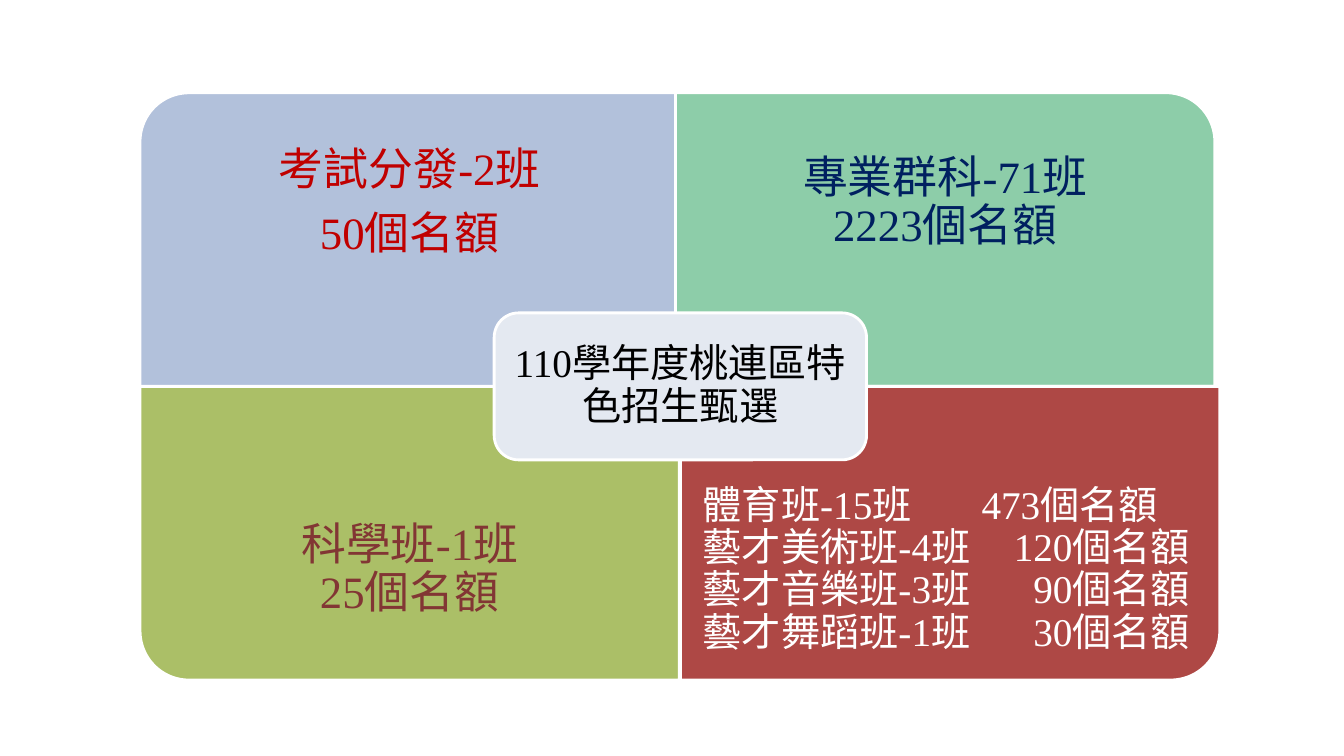
"""Build the four-quadrant slide on the 110 special admissions places."""
from lxml import etree
from pptx import Presentation
from pptx.dml.color import RGBColor
from pptx.enum import shapes, text
from pptx.oxml import ns
from pptx.util import Pt

FONT = "Times New Roman"
WHITE = RGBColor(0xFF, 0xFF, 0xFF)
BLACK = RGBColor(0, 0, 0)
RED = RGBColor(0xC0, 0, 0)
NAVY = RGBColor(0, 0x20, 0x60)
MAROON = RGBColor(0x82, 0x36, 0x34)
BLUE = RGBColor(0xB2, 0xC1, 0xDB)
GREEN = RGBColor(0x8D, 0xCD, 0xA9)
OLIVE = RGBColor(0xAB, 0xBF, 0x67)
BRICK = RGBColor(0xAE, 0x48, 0x45)
PALE = RGBColor(0xE4, 0xE9, 0xF1)

# left, row, rotation, fill, text colour, size, inset, paragraphs as (text, right tab)
QUADRANTS = [
    (100, 0, 270, BLUE, RED, 32, 18, [("考試分發-2班", None), ("50個名額", None)]),
    (482.5, 0, 0, GREEN, NAVY, 32, 18, [("專業群科-71班\n2223個名額", None)]),
    (100, 1, 180, OLIVE, MAROON, 32, 18, [("科學班-1班\n25個名額", None)]),
    (486, 1, 90, BRICK, WHITE, 28, 16, [
        ("體育班-15班\t473個名額", 325),
        ("藝才美術班-4班\t120個名額", 348),
        ("藝才音樂班-3班\t90個名額", 348),
        ("藝才舞蹈班-1班\t30個名額", 348),
    ]),
]
CENTRE = [("110學年度桃連區特色招生甄選", None)]
TOP, WIDTH, HEIGHT = 66.25, 385.25, 209.75
TEXT_HEIGHT = HEIGHT * 0.75


def add_panel(s, kind, left, top, width, height, fill, rotation=0):
    """Add a white-edged panel that covers the given area once rotated."""
    if rotation % 180:
        left, top = left + (width - height) / 2, top + (height - width) / 2
        width, height = height, width
    sp = s.shapes.add_shape(kind, Pt(left), Pt(top), Pt(width), Pt(height))
    sp.rotation = rotation
    sp.shadow.inherit = False
    sp.fill.solid()
    sp.fill.fore_color.rgb = fill
    sp.line.color.rgb = WHITE
    sp.line.width = Pt(2)


def add_text(s, left, top, width, height, inset, paragraphs, size, color):
    """Add a middle-anchored label; paragraphs with a tab are left aligned."""
    tf = s.shapes.add_textbox(Pt(left), Pt(top), Pt(width), Pt(height)).text_frame
    tf.word_wrap = True
    tf.vertical_anchor = text.MSO_ANCHOR.MIDDLE
    tf.margin_left = tf.margin_right = tf.margin_top = tf.margin_bottom = Pt(inset)
    for i, (words, tab) in enumerate(paragraphs):
        p = tf.add_paragraph() if i else tf.paragraphs[0]
        p.text = words
        p.line_spacing = 0.9
        p.space_after = Pt(0 if tab else 11)
        p.alignment = text.PP_ALIGN.LEFT if tab else text.PP_ALIGN.CENTER
        if tab:
            tabs = etree.SubElement(p._p.get_or_add_pPr(), ns.qn("a:tabLst"))
            etree.SubElement(tabs, ns.qn("a:tab"), pos=str(Pt(tab)), algn="r")
        p.font.name = FONT
        p.font.size = Pt(size)
        p.font.color.rgb = color


def main():
    """Draw the quadrants, then the centre panel over them."""
    prs = Presentation()
    prs.slide_width, prs.slide_height = Pt(960), Pt(540)
    s = prs.slides.add_slide(prs.slide_layouts[6])
    for left, row, rotation, fill, color, size, inset, paragraphs in QUADRANTS:
        top = TOP + row * HEIGHT
        add_panel(s, shapes.MSO_SHAPE.ROUND_1_RECTANGLE, left, top, WIDTH, HEIGHT, fill, rotation)
        text_top = top + row * (HEIGHT - TEXT_HEIGHT)
        add_text(s, left, text_top, WIDTH, TEXT_HEIGHT, inset, paragraphs, size, color)
    add_panel(s, shapes.MSO_SHAPE.ROUNDED_RECTANGLE, 353, 223.5, 266, 105, PALE)
    add_text(s, 358, 228.5, 256, 95, 8.5, CENTRE, 28, BLACK)
    prs.save("out.pptx")


if __name__ == "__main__":
    main()
